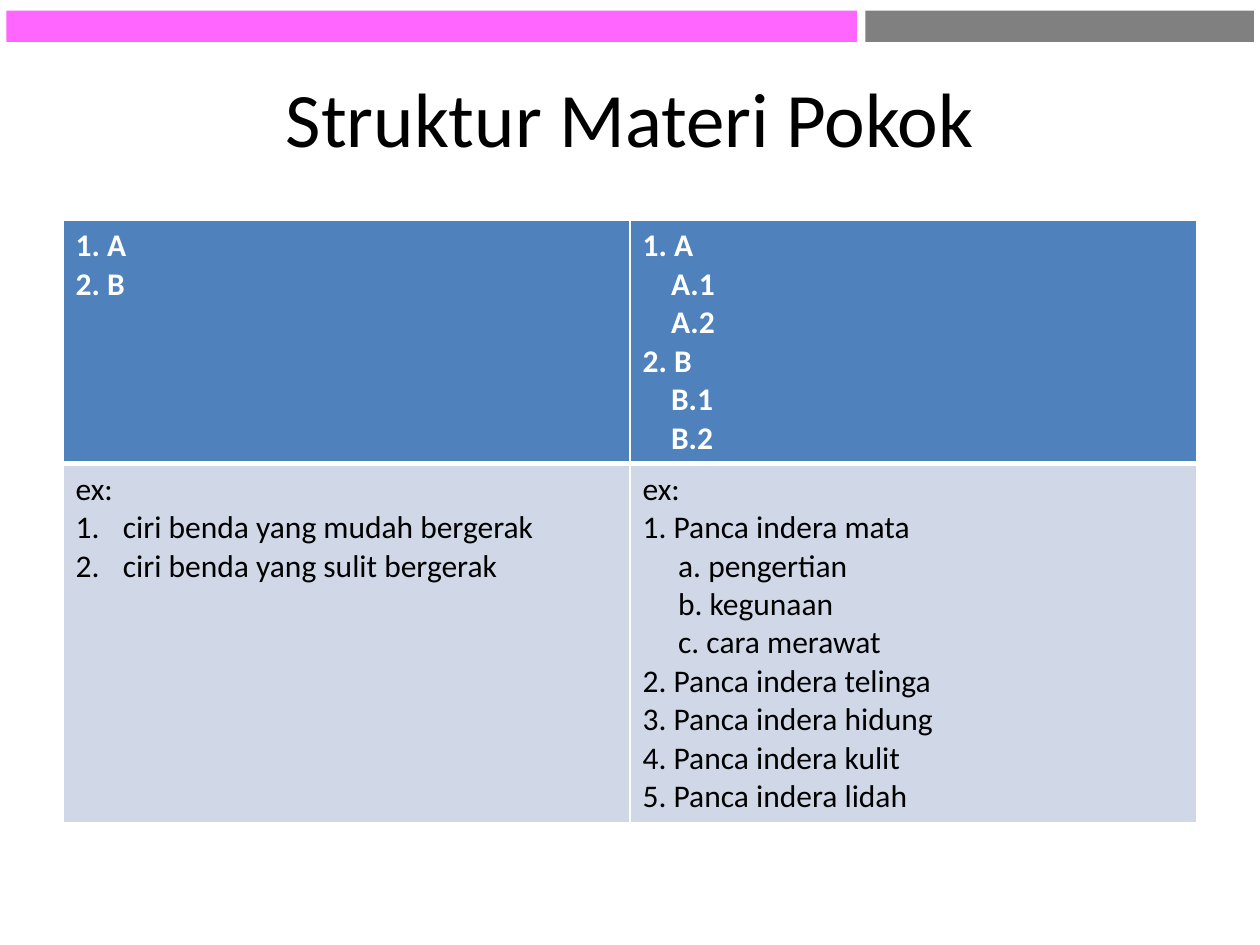
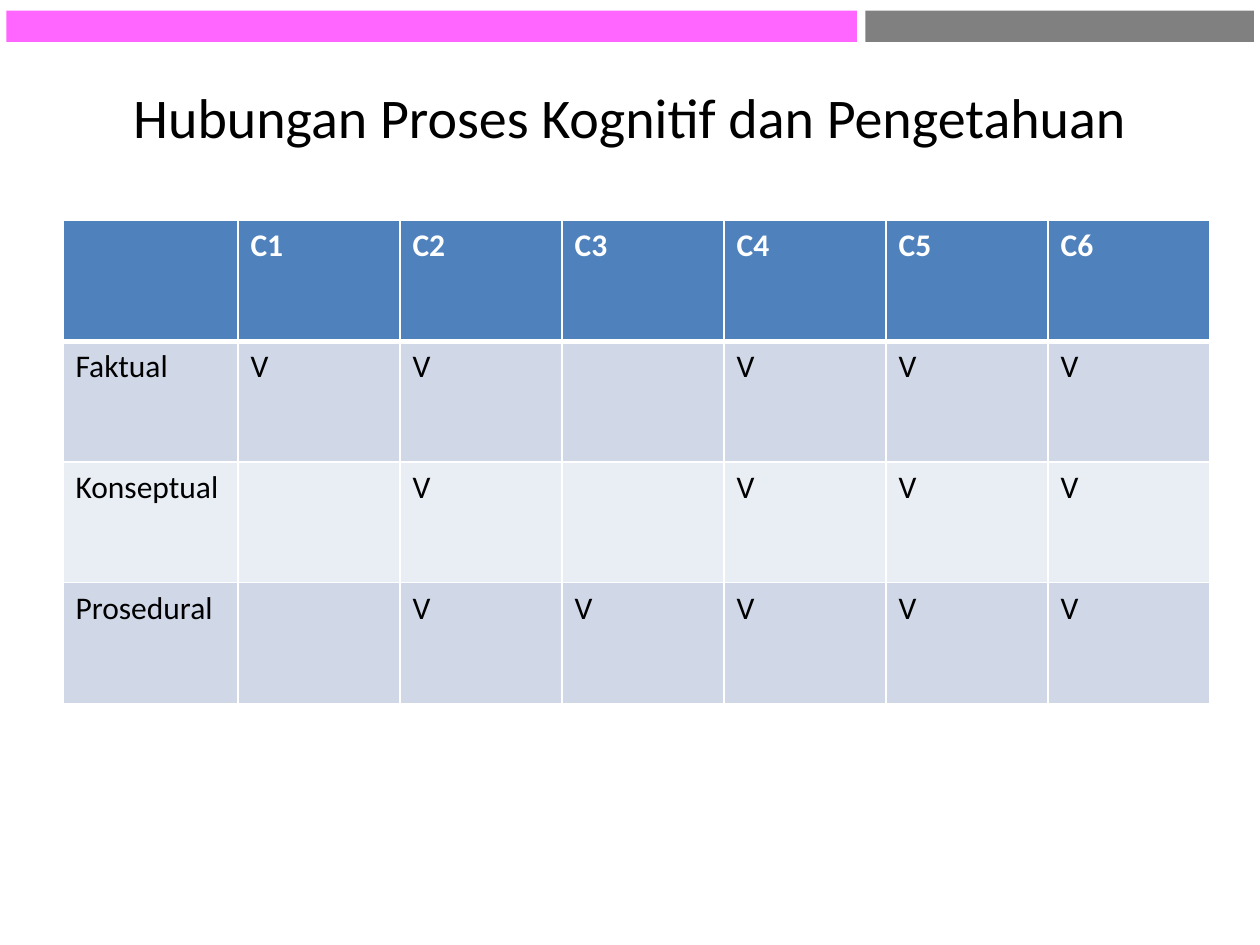
from lxml.etree import SubElement
from pptx import Presentation
from pptx.dml.color import RGBColor
from pptx.enum.shapes import MSO_SHAPE
from pptx.enum.text import MSO_ANCHOR, PP_ALIGN
from pptx.oxml.ns import qn
from pptx.util import Pt

FONT = "Calibri"
PINK, GREY, WHITE, BLACK = "FF66FF", "808080", "FFFFFF", "000000"
HEADER_FILL = "4F81BD"
ROW_FILLS = ("D0D8E8", "E9EDF4")
THIN, THICK = 1, 3
MARGIN, TABLE_TOP = 36, 126
LETTER_INDENT, SUB_INDENT, NUMBER_INDENT = 16.3, 20.3, 27


def color(hex_string):
    return RGBColor.from_string(hex_string)


def style_font(font, size, hex_string, bold=False):
    font.name = FONT
    font.size = Pt(size)
    font.bold = bold
    font.color.rgb = color(hex_string)


def add_band(slide, left, width, fill):
    band = slide.shapes.add_shape(
        MSO_SHAPE.RECTANGLE, Pt(left), Pt(6), Pt(width), Pt(18))
    band.shadow.inherit = False
    band.fill.solid()
    band.fill.fore_color.rgb = color(fill)
    band.line.fill.background()


def add_titled_slide(deck, heading, size):
    """Title-only slide with the two bands along its top edge."""
    slide = deck.slides.add_slide(deck.slide_layouts[5])
    add_band(slide, 3.6, 486, PINK)
    add_band(slide, 494.6, 222, GREY)
    title = slide.shapes.title
    title.left, title.top = Pt(MARGIN), Pt(21.6)
    title.width, title.height = Pt(648), Pt(90)
    frame = title.text_frame
    frame.text = heading
    frame.vertical_anchor = MSO_ANCHOR.MIDDLE
    frame.paragraphs[0].alignment = PP_ALIGN.CENTER
    style_font(frame.paragraphs[0].runs[0].font, size, BLACK)
    return slide


def set_borders(cell, top, bottom):
    properties = cell._tc.get_or_add_tcPr()
    for side, width in (("L", THIN), ("R", THIN), ("T", top), ("B", bottom)):
        line = SubElement(properties, qn(f"a:ln{side}"), w=str(Pt(width)))
        fill = SubElement(line, qn("a:solidFill"))
        SubElement(fill, qn("a:srgbClr"), val=WHITE)


def indent_paragraph(paragraph, indent, numbered):
    properties = paragraph._p.get_or_add_pPr()
    properties.set("marL", str(Pt(indent)))
    if numbered:
        properties.set("indent", str(-Pt(indent)))
        SubElement(properties, qn("a:buAutoNum"), type="arabicPeriod")


def fill_cell(cell, lines, is_header):
    """Each line is a string, or (text, indent, numbered)."""
    lines = [(line, 0, False) if isinstance(line, str) else line
             for line in lines]
    cell.text_frame.text = "\n".join(text for text, _, _ in lines)
    for paragraph, (_, indent, numbered) in zip(
            cell.text_frame.paragraphs, lines):
        if indent:
            indent_paragraph(paragraph, indent, numbered)
        style_font(paragraph.font, 18, WHITE if is_header else BLACK, is_header)
        for run in paragraph.runs:
            style_font(run.font, 18, WHITE if is_header else BLACK, is_header)


def add_grid(slide, rows, column_widths, row_heights):
    """Table with a header row and banded body rows."""
    grid = slide.shapes.add_table(
        len(rows), len(column_widths), Pt(MARGIN), Pt(TABLE_TOP),
        Pt(sum(column_widths)), Pt(sum(row_heights))).table
    for column, width in zip(grid.columns, column_widths):
        column.width = Pt(width)
    for r, (cells, height) in enumerate(zip(rows, row_heights)):
        grid.rows[r].height = Pt(height)
        for c, lines in enumerate(cells):
            cell = grid.cell(r, c)
            set_borders(cell, top=THICK if r == 1 else THIN,
                        bottom=THICK if r == 0 else THIN)
            cell.fill.solid()
            cell.fill.fore_color.rgb = color(
                ROW_FILLS[(r - 1) % 2] if r else HEADER_FILL)
            fill_cell(cell, lines, is_header=r == 0)


def letter(text):
    return text, LETTER_INDENT, False


def sub(text):
    return text, SUB_INDENT, False


def numbered(text):
    return text, NUMBER_INDENT, True


def main():
    deck = Presentation()
    deck.slide_width, deck.slide_height = Pt(720), Pt(540)

    # Structure of the main material
    structure = add_titled_slide(deck, "Struktur Materi Pokok", 44)
    outlines = [
        ["1. A", "2. B"],
        ["1. A", letter("A.1"), letter("A.2"),
         "2. B", letter("B.1"), letter("B.2")],
    ]
    examples = [
        ["ex:", numbered("ciri benda yang mudah bergerak"),
         numbered("ciri benda yang sulit bergerak")],
        ["ex:", "1. Panca indera mata", sub("a. pengertian"),
         sub("b. kegunaan"), sub("c. cara merawat"),
         "2. Panca indera telinga", "3. Panca indera hidung",
         "4. Panca indera kulit", "5. Panca indera lidah"],
    ]
    add_grid(structure, [outlines, examples], [324, 324], [138, 200])

    # Cognitive processes against kinds of knowledge
    relation = add_titled_slide(
        deck, "Hubungan Proses Kognitif dan Pengetahuan", 32)
    levels = range(1, 7)
    reached_levels = {
        "Faktual": {1, 2, 4, 5, 6},
        "Konseptual": {2, 4, 5, 6},
        "Prosedural": {2, 3, 4, 5, 6},
    }
    matrix = [[[""]] + [[f"C{level}"] for level in levels]]
    for knowledge, reached in reached_levels.items():
        matrix.append([[knowledge]] + [
            ["V" if level in reached else ""] for level in levels])
    add_grid(relation, matrix, [100] + [92.6] * 6, [69] * 4)

    deck.save("out.pptx")


if __name__ == "__main__":
    main()
